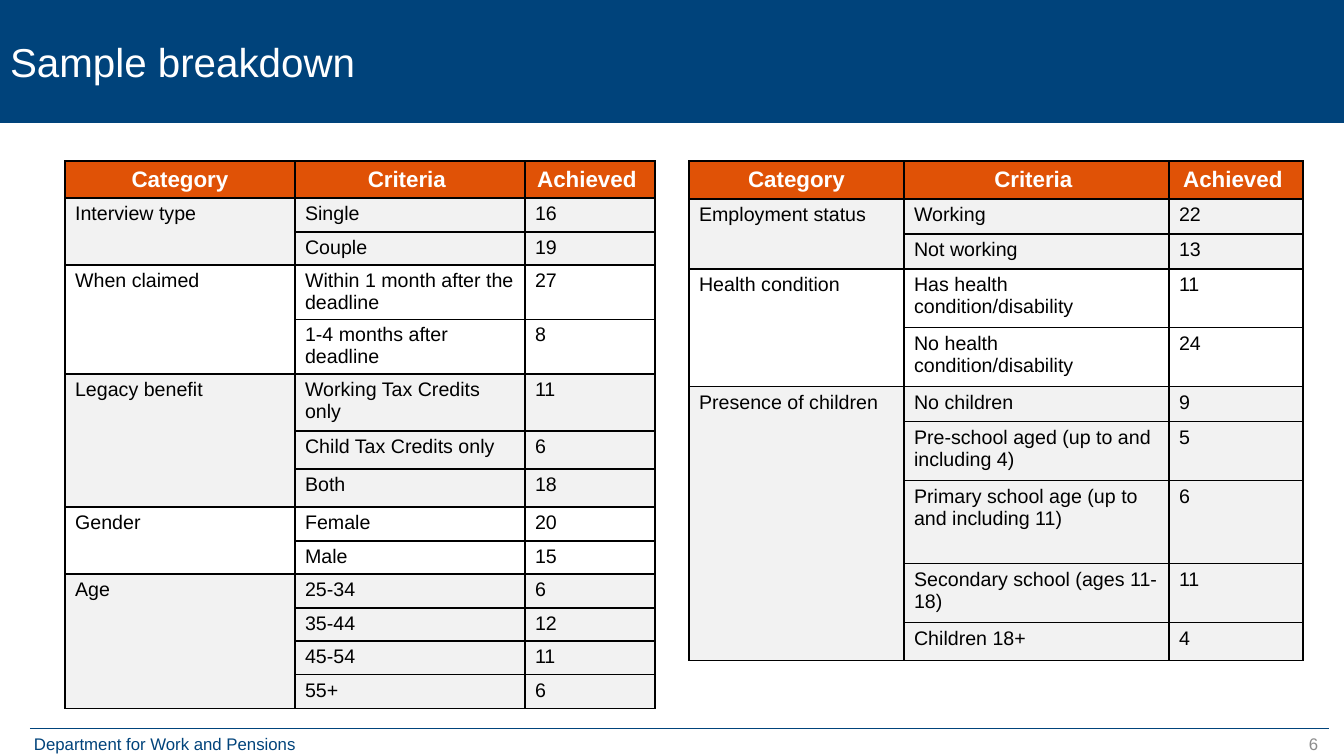
from lxml import etree
from pptx import Presentation
from pptx.dml.color import RGBColor
from pptx.enum.shapes import MSO_CONNECTOR
from pptx.enum.text import MSO_ANCHOR, MSO_AUTO_SIZE, PP_ALIGN
from pptx.oxml.ns import qn
from pptx.util import Emu, Pt

LEFT, CENTER, RIGHT = PP_ALIGN.LEFT, PP_ALIGN.CENTER, PP_ALIGN.RIGHT
TOP, MIDDLE = MSO_ANCHOR.TOP, MSO_ANCHOR.MIDDLE
STRAIGHT = MSO_CONNECTOR.STRAIGHT
NO_AUTOFIT = MSO_AUTO_SIZE.NONE

PX = 914400 / 100.8  # EMU per px
NAVY, ORANGE, WHITE, BLACK = "00437B", "E05206", "FFFFFF", "000000"
BAND, GREY = "F2F2F2", "8C8C8C"

TITLE = {"size": Pt(28.8), "name": "Arial", "bold": False}
HEADER = {"size": Pt(16), "name": "Arial", "bold": True}
BODY = {"size": Pt(14), "name": "Arial", "bold": False}
FOOTER = {"size": Pt(12), "name": "Arial", "bold": False}

HEADINGS = ("Category", "Criteria ", "Achieved ")

# Each category holds its criteria with the number achieved
CLAIM_SAMPLE = {
    "Interview type": [("Single", 16), ("Couple", 19)],
    "When claimed": [("Within 1 month after the deadline", 27),
                     ("1-4 months after deadline", 8)],
    "Legacy benefit": [("Working Tax Credits only", 11),
                       ("Child Tax Credits only", 6), ("Both", 18)],
    "Gender": [("Female", 20), ("Male", 15)],
    "Age": [("25-34", 6), ("35-44", 12), ("45-54", 11), ("55+", 6)],
}
HOUSEHOLD_SAMPLE = {
    "Employment status": [("Working", 22), ("Not working", 13)],
    "Health condition": [("Has health condition/disability", 11),
                         ("No health condition/disability", 24)],
    "Presence of children": [("No children", 9),
                             ("Pre-school aged (up to and including 4)", 5),
                             ("Primary school age (up to and including 11)", 6),
                             ("Secondary school (ages 11-18)", 11),
                             ("Children 18+", 4)],
}


def px(n):
    return Emu(round(n * PX))


def rgb(color):
    return RGBColor.from_string(color)


def write(tf, text, font, color, align=LEFT):
    p = tf.paragraphs[0]
    p.alignment = align
    r = p.add_run()
    r.text = text
    for name, value in font.items():
        setattr(r.font, name, value)
    r.font.color.rgb = rgb(color)


def add_title(s, text, width, height):
    sp = s.shapes.title
    for name, value in {"left": 0, "top": 0, "width": width, "height": height}.items():
        setattr(sp, name, px(value))
    sp.fill.solid()
    sp.fill.fore_color.rgb = rgb(NAVY)
    tf = sp.text_frame
    tf.vertical_anchor = MIDDLE
    tf.auto_size = NO_AUTOFIT
    write(tf, text, TITLE, WHITE)


def add_text(s, text, box, color, align=LEFT):
    tf = s.shapes.add_textbox(*map(px, box)).text_frame
    tf.word_wrap = True
    write(tf, text, FOOTER, color, align)


def add_rule(s, x1, x2, y):
    line = s.shapes.add_connector(STRAIGHT, px(x1), px(y), px(x2), px(y))
    line.line.color.rgb = rgb(NAVY)
    line.line.width = Pt(0.5)
    etree.SubElement(line._element.spPr, qn("a:effectLst"))


def add_borders(cell):
    tcPr = cell._tc.get_or_add_tcPr()
    for i, side in enumerate(("lnL", "lnR", "lnT", "lnB")):
        ln = etree.Element(qn(f"a:{side}"), w=str(Pt(1)))
        fill = etree.SubElement(ln, qn("a:solidFill"))
        etree.SubElement(fill, qn("a:srgbClr"), val=BLACK)
        tcPr.insert(i, ln)


def format_cell(cell, fill, anchor):
    cell.fill.solid()
    cell.fill.fore_color.rgb = rgb(fill)
    cell.vertical_anchor = anchor
    add_borders(cell)


def add_sample_table(s, left, top, widths, heights, sample):
    table = s.shapes.add_table(len(heights), len(widths), px(left), px(top),
                               px(sum(widths)), px(sum(heights))).table
    for column, width in zip(table.columns, widths):
        column.width = px(width)
    for row, height in zip(table.rows, heights):
        row.height = px(height)

    # Header row
    for col, heading in enumerate(HEADINGS):
        cell = table.cell(0, col)
        format_cell(cell, ORANGE, MIDDLE)
        write(cell.text_frame, heading, HEADER, WHITE, CENTER)

    # Categories, banded in turn, each merged down its criteria
    row = 1
    for i, (category, criteria) in enumerate(sample.items()):
        first, last = table.cell(row, 0), table.cell(row + len(criteria) - 1, 0)
        for criterion, achieved in criteria:
            for col in range(len(widths)):
                format_cell(table.cell(row, col), WHITE if i % 2 else BAND, TOP)
            write(table.cell(row, 1).text_frame, criterion, BODY, BLACK)
            write(table.cell(row, 2).text_frame, str(achieved), BODY, BLACK)
            row += 1
        first.merge(last)
        write(first.text_frame, category, BODY, BLACK)


def main():
    prs = Presentation()
    prs.slide_width, prs.slide_height = px(1344), px(756)
    s = prs.slides.add_slide(prs.slide_layouts[5])

    # Title band
    add_title(s, "Sample breakdown", 1344, 123)

    # Sample tables
    add_sample_table(s, 65, 161, (230, 230, 130),
                     (37, 34, 33, 54, 55, 57, 38, 38, 34, 33, 34, 33, 34, 34),
                     CLAIM_SAMPLE)
    add_sample_table(s, 689, 161, (215, 265, 134),
                     (38, 35, 35, 59, 59, 35, 59, 83, 59, 38), HOUSEHOLD_SAMPLE)

    # Footer
    add_rule(s, 30, 1329, 728)
    add_text(s, "Department for Work and Pensions", (24, 729, 326, 30), NAVY)
    add_text(s, "6", (1026, 729, 302, 40), GREY, RIGHT)

    prs.save("out.pptx")


if __name__ == "__main__":
    main()
